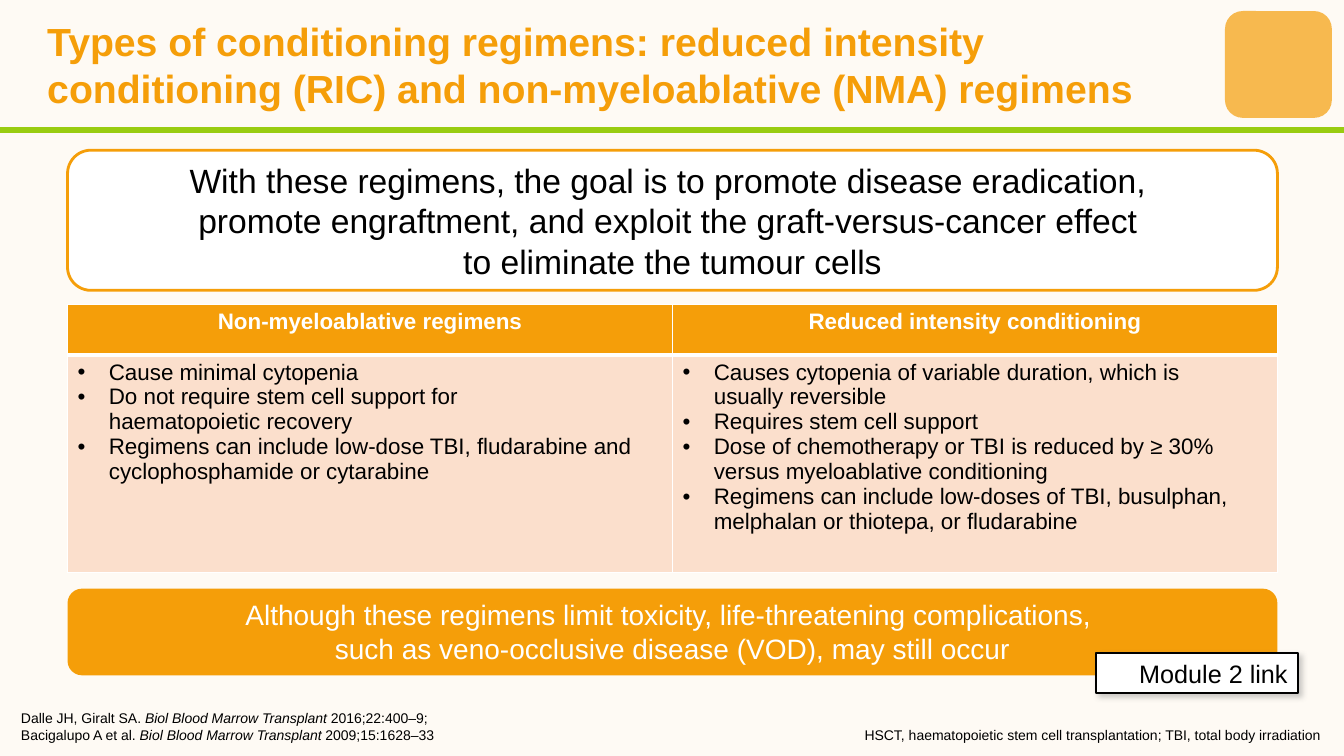
from lxml import etree
from pptx import Presentation
from pptx.dml.color import RGBColor
from pptx.enum.shapes import MSO_CONNECTOR, MSO_SHAPE
from pptx.enum.text import MSO_ANCHOR, PP_ALIGN
from pptx.oxml import parse_xml
from pptx.oxml.ns import qn
from pptx.util import Inches, Pt

ROUND, RECT = MSO_SHAPE.ROUNDED_RECTANGLE, MSO_SHAPE.RECTANGLE
LEFT, MID, RIGHT = PP_ALIGN.LEFT, PP_ALIGN.CENTER, PP_ALIGN.RIGHT
TOP, CENTER, BOTTOM = MSO_ANCHOR.TOP, MSO_ANCHOR.MIDDLE, MSO_ANCHOR.BOTTOM
STRAIGHT = MSO_CONNECTOR.STRAIGHT
CREAM = RGBColor(0xFE, 0xFA, 0xF4)
ORANGE = RGBColor(0xF5, 0x9E, 0x09)
PEACH = RGBColor(0xFB, 0xDF, 0xCC)
GREEN = RGBColor(0x99, 0xCC, 0x11)
WHITE = RGBColor(0xFF, 0xFF, 0xFF)
BLACK = RGBColor(0, 0, 0)
NS = 'xmlns:a="http://schemas.openxmlformats.org/drawingml/2006/main"'


def style(frame, size, color, align=LEFT, bold=False, space=1.0):
    for para in frame.paragraphs:
        para.alignment = align
        para.line_spacing = space
        for run in para.runs:
            font = run.font
            font.name, font.size, font.bold = "Arial", Pt(size), bold
            font.color.rgb = color


def add_box(kind, spot, fill, line=None, width=0):
    box = slide.shapes.add_shape(kind, *map(Inches, spot))
    box.shadow.inherit = False
    box.fill.solid()
    box.fill.fore_color.rgb = fill
    if line is None:
        box.line.fill.background()
    else:
        box.line.color.rgb = line
        box.line.width = Pt(width)
    return box


prs = Presentation()
prs.slide_width, prs.slide_height = Inches(13.33), Inches(7.5)
slide = prs.slides.add_slide(prs.slide_layouts[6])
slide.background.fill.solid()
slide.background.fill.fore_color.rgb = CREAM

badge = add_box(ROUND, (12.15, 0.11, 1.06, 1.06), ORANGE)
tint = badge.fill._xPr.find(qn("a:solidFill"))[0]
etree.SubElement(tint, qn("a:alpha"), val="70000")

rule = slide.shapes.add_connector(STRAIGHT, 0, Inches(1.29), prs.slide_width, Inches(1.29))
rule.line.color.rgb = GREEN
rule.line.width = Pt(4.5)
etree.SubElement(rule._element.spPr, qn("a:effectLst"))

title = [("Types of conditioning regimens: reduced intensity conditioning (RIC) "
          "and non-myeloablative (NMA) regimens", False)]
cites = [("Dalle JH, Giralt SA. ", False), ("Biol Blood Marrow Transplant ", True),
         ("2016;22:400–9;", False), None,
         ("Bacigalupo A et al. ", False), ("Biol Blood Marrow Transplant ", True),
         ("2009;15:1628–33", False)]
terms = [("HSCT, haematopoietic stem cell transplantation; TBI, total body irradiation ", False)]
for spot, parts, anchor, look in [
    ((0.37, 0.09, 11.78, 1.1), title, CENTER, (28, ORANGE, LEFT, True)),
    ((0.11, 7.1, 7.98, 0.32), cites, BOTTOM, (10, BLACK)),
    ((5.25, 7.1, 7.98, 0.32), terms, BOTTOM, (10, BLACK, RIGHT)),
]:
    frame = slide.shapes.add_textbox(*map(Inches, spot)).text_frame
    frame.word_wrap = True
    frame.vertical_anchor = anchor
    para = frame.paragraphs[0]
    for part in parts:
        if part is None:
            para.add_line_break()
            continue
        run = para.add_run()
        run.text, run.font.italic = part
    style(frame, *look)

columns = [
    ("Non-myeloablative regimens", [
        "Cause minimal cytopenia",
        "Do not require stem cell support for \vhaematopoietic recovery",
        "Regimens can include low-dose TBI, fludarabine and cyclophosphamide or cytarabine"]),
    ("Reduced intensity conditioning", [
        "Causes cytopenia of variable duration, which is \vusually reversible",
        "Requires stem cell support",
        "Dose of chemotherapy or TBI is reduced by ≥ 30% versus myeloablative conditioning",
        "Regimens can include low-doses of TBI, busulphan, melphalan or thiotepa, "
        "or fludarabine"]),
]
table = slide.shapes.add_table(2, 2, Inches(0.67), Inches(3.02), Inches(12), Inches(2.66)).table
table.rows[0].height, table.rows[1].height = Inches(0.5), Inches(2.16)
for col, (head, points) in enumerate(columns):
    for row, text in enumerate([head, "\n".join(points)]):
        cell = table.cell(row, col)
        frame = cell.text_frame
        frame.text = text
        props = cell._tc.get_or_add_tcPr()
        for side in ("lnL", "lnR", "lnT", "lnB"):
            thick = 3 if (row, side) in [(0, "lnB"), (1, "lnT")] else 1
            props.append(parse_xml(
                f'<a:{side} {NS} w="{Pt(thick)}"><a:solidFill>'
                f'<a:srgbClr val="{WHITE}"/></a:solidFill></a:{side}>'))
        cell.fill.solid()
        cell.fill.fore_color.rgb = PEACH if row else ORANGE
        if row:
            for para in frame.paragraphs:
                pro = para._p.get_or_add_pPr()
                pro.set("marL", str(Inches(0.31)))
                pro.set("indent", str(Inches(-0.31)))
                etree.SubElement(pro, qn("a:buFont"), typeface="Arial")
                etree.SubElement(pro, qn("a:buChar"), char="•")
            style(frame, 16, BLACK)
        else:
            style(frame, 16, WHITE, MID, True)

risk = add_box(ROUND, (0.67, 5.84, 12, 0.86), ORANGE)
goal = add_box(ROUND, (0.67, 1.49, 12, 1.39), WHITE, ORANGE, 2)
link = add_box(RECT, (10.87, 6.48, 2, 0.4), WHITE, BLACK, 1.5)
for box, text, anchor, look in [
    (risk, "Although these regimens limit toxicity, life-threatening complications, \v"
           "such as veno-occlusive disease (VOD), may still occur", TOP, (20, WHITE, MID)),
    (goal, "With these regimens, the goal is to promote disease eradication, \v"
           "promote engraftment, and exploit the graft-versus-cancer effect \v"
           "to eliminate the tumour cells", CENTER, (24, BLACK, MID)),
    (link, "Module 2 link", TOP, (18, BLACK, RIGHT)),
]:
    box.text_frame.text = text
    box.text_frame.word_wrap = True
    box.text_frame.vertical_anchor = anchor
    style(box.text_frame, *look)

glow = link._element.spPr.find(qn("a:effectLst"))
glow.append(parse_xml(
    f'<a:outerShdw {NS} blurRad="{Pt(4)}" dist="{Pt(3)}" dir="2700000" algn="tl">'
    '<a:srgbClr val="808080"><a:alpha val="40000"/></a:srgbClr></a:outerShdw>'))

prs.save("out.pptx")
